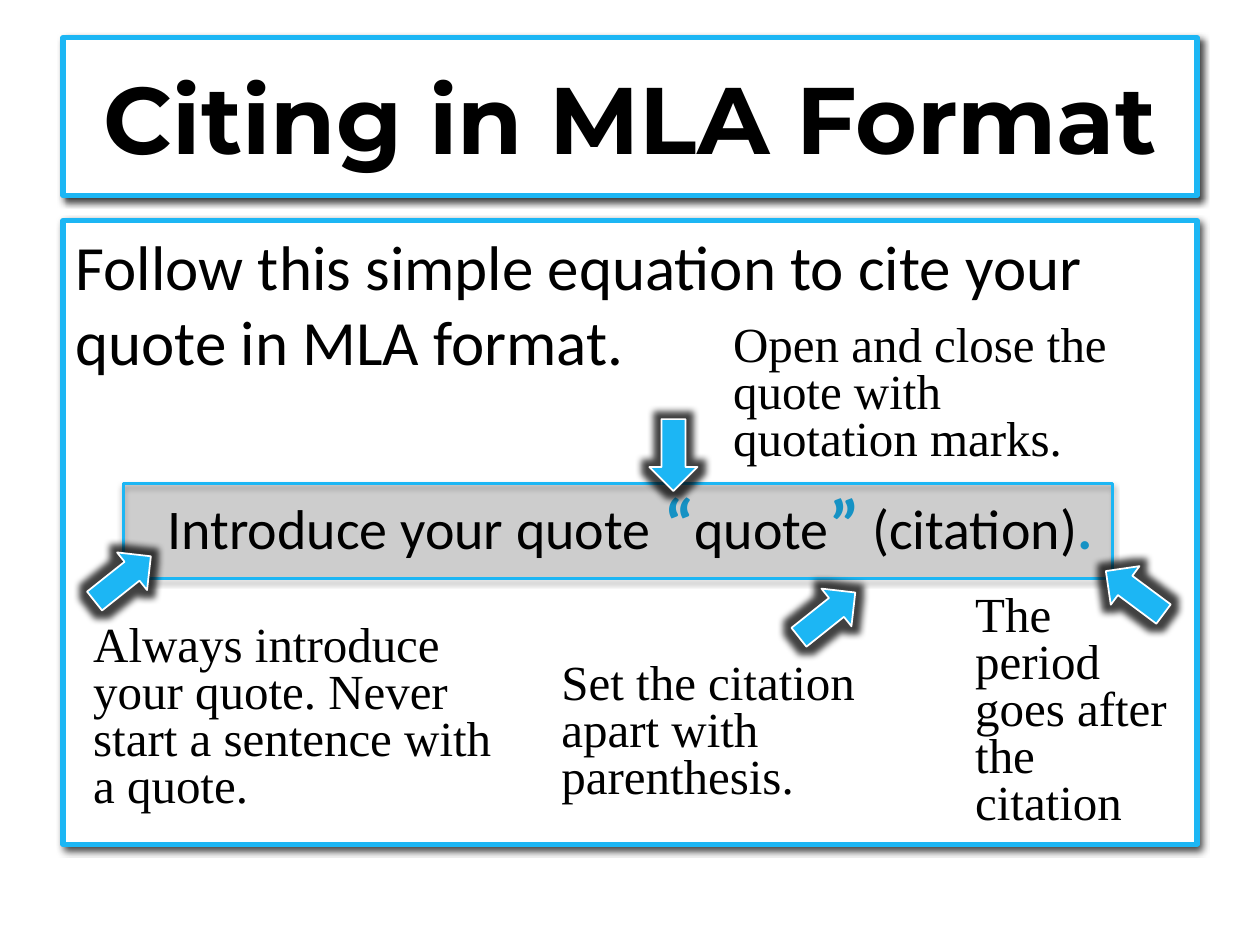
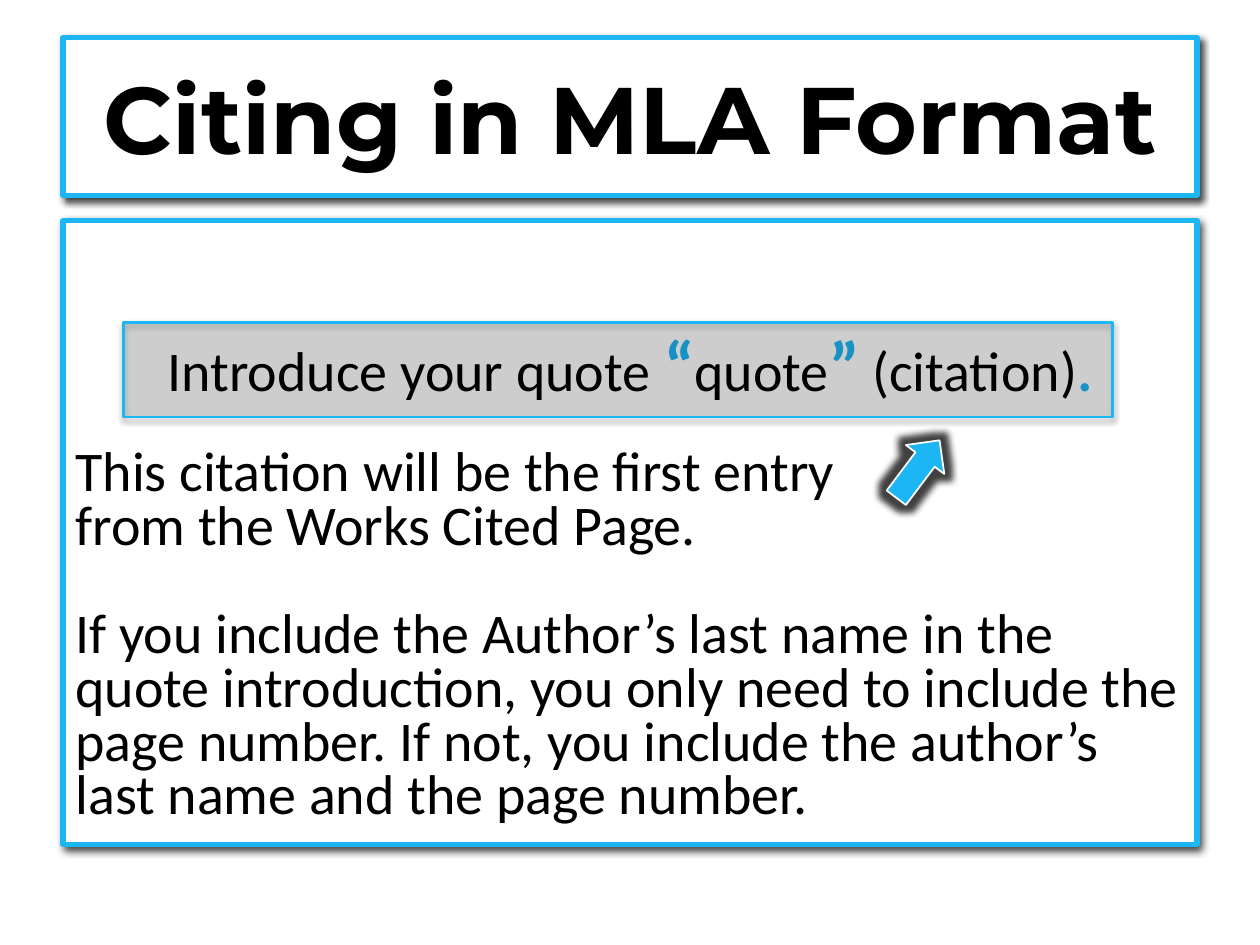
from lxml.etree import SubElement
from pptx import Presentation
from pptx.dml.color import RGBColor
from pptx.enum.shapes import MSO_SHAPE
from pptx.enum.text import MSO_ANCHOR, MSO_AUTO_SIZE, PP_ALIGN
from pptx.oxml.ns import qn
from pptx.util import Cm, Pt

BLACK = RGBColor(0x00, 0x00, 0x00)
WHITE = RGBColor(0xFF, 0xFF, 0xFF)
BLUE = RGBColor(0x1C, 0xB6, 0xF4)


class CitationDeck:
    """Builds the citation slides in one shared style."""

    title_font, body_font, note_font = "Montserrat", "Calibri", "Times New Roman"
    formula = (
        ("Introduce your quote ", None),
        ("“", 40),
        ("quote", None),
        ("”", 40),
        (" (citation)", None),
        (".", 32),
    )

    def __init__(self):
        self.deck = Presentation()
        self.deck.slide_width, self.deck.slide_height = Cm(25.4), Cm(19.05)
        self.page = None

    def add_page(self, title):
        self.page = self.deck.slides.add_slide(self.deck.slide_layouts[1])
        heading, self.body = self.page.placeholders
        self.frame(heading, 0.76, 3.18)
        self.frame(self.body, 4.45, 12.57)
        heading.text_frame.vertical_anchor = MSO_ANCHOR.MIDDLE
        self.body.text_frame.vertical_anchor = MSO_ANCHOR.TOP
        paragraph = heading.text_frame.paragraphs[0]
        paragraph.text = title
        paragraph.alignment = PP_ALIGN.CENTER
        self.style_font(paragraph.font, self.title_font, 54)
        paragraph.font.bold = True
        outline = SubElement(paragraph.font._element, qn("a:ln"), w=str(Pt(0.75)))
        paragraph.font._element.insert(0, outline)
        fill = SubElement(outline, qn("a:solidFill"))
        SubElement(fill, qn("a:srgbClr"), val=str(BLUE))

    def frame(self, box, top, height):
        box.left, box.top, box.width, box.height = Cm(1.27), Cm(top), Cm(22.86), Cm(height)
        box.text_frame.auto_size = MSO_AUTO_SIZE.NONE
        self.paint(box, WHITE, BLUE, 3)
        self.add_shadow(box, 72, 4, 3, 49)

    def paint(self, shape, fill, line, width):
        shape.fill.solid()
        shape.fill.fore_color.rgb = fill
        shape.line.color.rgb = line
        shape.line.width = Pt(width)

    def add_effect(self, shape, tag, opacity, **settings):
        shape.shadow.inherit = False
        effects = shape._element.spPr.find(qn("a:effectLst"))
        values = {key: str(value) for key, value in settings.items()}
        effect = SubElement(effects, qn(tag), **values)
        color = SubElement(effect, qn("a:srgbClr"), val=str(BLACK))
        SubElement(color, qn("a:alpha"), val=str(opacity * 1000))

    def add_shadow(self, shape, opacity, blur, distance, angle):
        self.add_effect(
            shape, "a:outerShdw", opacity, blurRad=Pt(blur), dist=Pt(distance),
            dir=angle * 60000, algn="tl", rotWithShape=0,
        )

    def style_font(self, font, name, size, color=BLACK):
        font.name, font.size = name, Pt(size)
        font.color.rgb = color

    def plain_paragraph(self, paragraph):
        properties = paragraph._p.get_or_add_pPr()
        properties.set("marL", "0")
        properties.set("indent", "0")
        SubElement(properties, qn("a:buNone"))
        paragraph.space_before = Pt(0)

    def add_lead(self, text):
        paragraph = self.body.text_frame.paragraphs[0]
        self.plain_paragraph(paragraph)
        paragraph.text = text
        self.style_font(paragraph.font, self.body_font, 36)

    def add_formula(self, band_top, gap=0):
        text_frame = self.body.text_frame
        paragraph = text_frame.add_paragraph() if gap else text_frame.paragraphs[0]
        self.plain_paragraph(paragraph)
        paragraph.space_before = Pt(gap)
        paragraph.alignment = PP_ALIGN.CENTER
        self.style_font(paragraph.font, self.body_font, 32)
        for text, accent_size in self.formula:
            span = paragraph.add_run()
            span.text = text
            if accent_size:
                self.style_font(span.font, self.body_font, accent_size, BLUE)
                span.font.bold = True
        band = self.page.shapes.add_shape(
            MSO_SHAPE.RECTANGLE, Cm(2.49), Cm(band_top), Cm(19.94), Cm(1.91))
        self.paint(band, BLACK, BLUE, 1.5)
        color = band._element.spPr.find(qn("a:solidFill")).find(qn("a:srgbClr"))
        SubElement(color, qn("a:alpha"), val="15000")
        self.add_shadow(band, 35, 3.1, 1.8, 90)

    def add_arrow(self, left, top, rotation):
        arrow = self.page.shapes.add_shape(
            MSO_SHAPE.RIGHT_ARROW, Cm(left), Cm(top), Cm(1.45), Cm(0.97))
        arrow.rotation = rotation
        self.paint(arrow, BLUE, WHITE, 1)
        self.add_effect(arrow, "a:glow", 75, rad=Pt(8))

    def add_note(self, left, top, width, height, lines, name=note_font, size=28, gap=0):
        box = self.page.shapes.add_textbox(Cm(left), Cm(top), Cm(width), Cm(height))
        box.text_frame.word_wrap = True
        box.text_frame.auto_size = MSO_AUTO_SIZE.SHAPE_TO_FIT_TEXT
        box.text_frame.text = "\n".join(lines)
        for paragraph in box.text_frame.paragraphs:
            paragraph.line_spacing = 0.8
            self.style_font(paragraph.font, name, size)
        if gap:
            paragraph.space_before = Pt(gap)


def main():
    deck = CitationDeck()
    title = "Citing in MLA Format"

    deck.add_page(title)
    deck.add_lead("Follow this simple equation to cite your quote in MLA format.")
    deck.add_formula(9.75, gap=58)
    for arrow in (
        (1.75, 11.18, 321.5),
        (12.85, 8.69, 90),
        (15.95, 11.91, 321.5),
        (22.15, 11.46, 216.7),
    ):
        deck.add_arrow(*arrow)
    for left, top, width, height, text in (
        (1.63, 12.47, 8.53, 4.11,
         "Always introduce your quote. Never start a sentence with a quote."),
        (14.53, 6.43, 8.26, 3.18, "Open and close the quote with quotation marks."),
        (11.07, 13.23, 7.82, 3.18, "Set the citation apart with parenthesis."),
        (19.41, 11.86, 4.72, 5.08, "The period goes after the citation"),
    ):
        deck.add_note(left, top, width, height, [text])

    deck.add_page(title)
    deck.body.text_frame.margin_top = Cm(2.03)
    deck.add_formula(6.5)
    deck.add_arrow(17.78, 8.97, 307)
    deck.add_note(
        1.27, 8.92, 22.86, 7.95,
        [
            "This citation will be the first entry",
            "from the Works Cited Page.",
            "If you include the Author’s last name in the quote introduction, "
            "you only need to include the page number. If not, you include "
            "the author’s last name and the page number.",
        ],
        name=deck.body_font, size=32, gap=31,
    )
    deck.deck.save("out.pptx")


if __name__ == "__main__":
    main()
